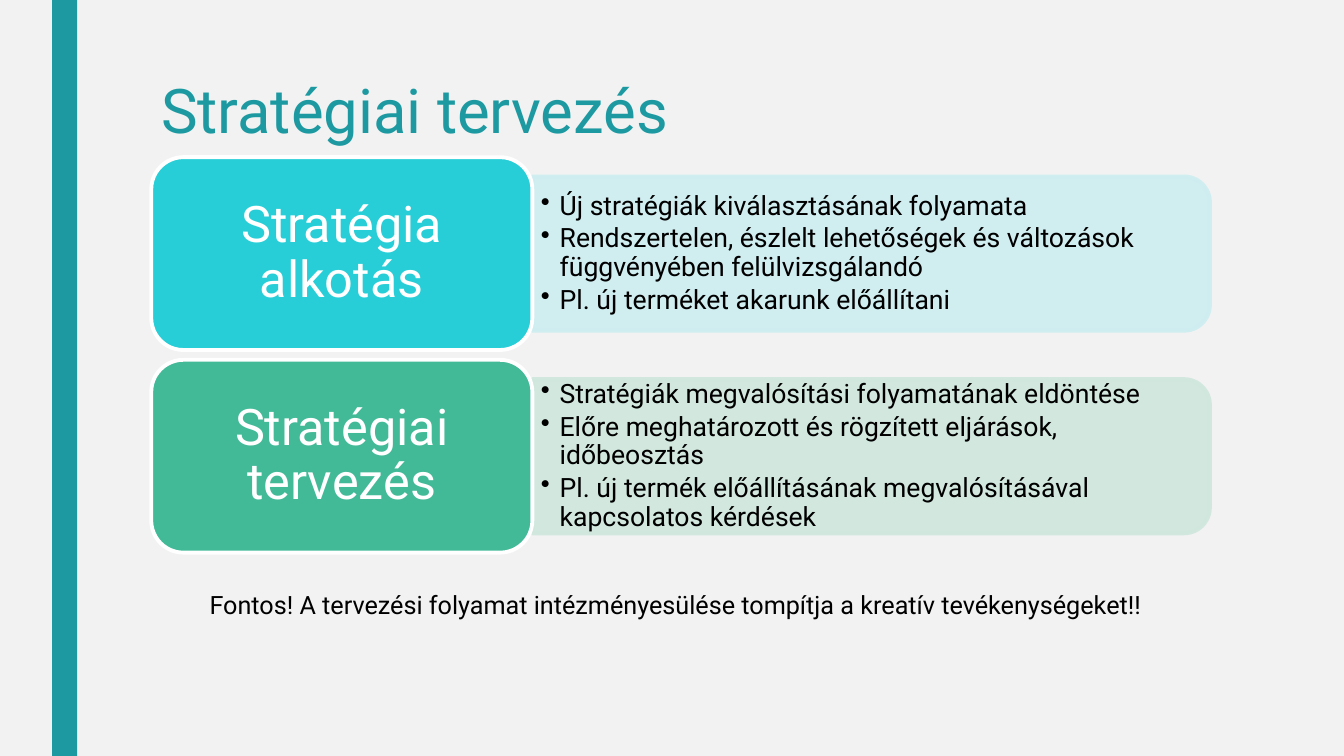
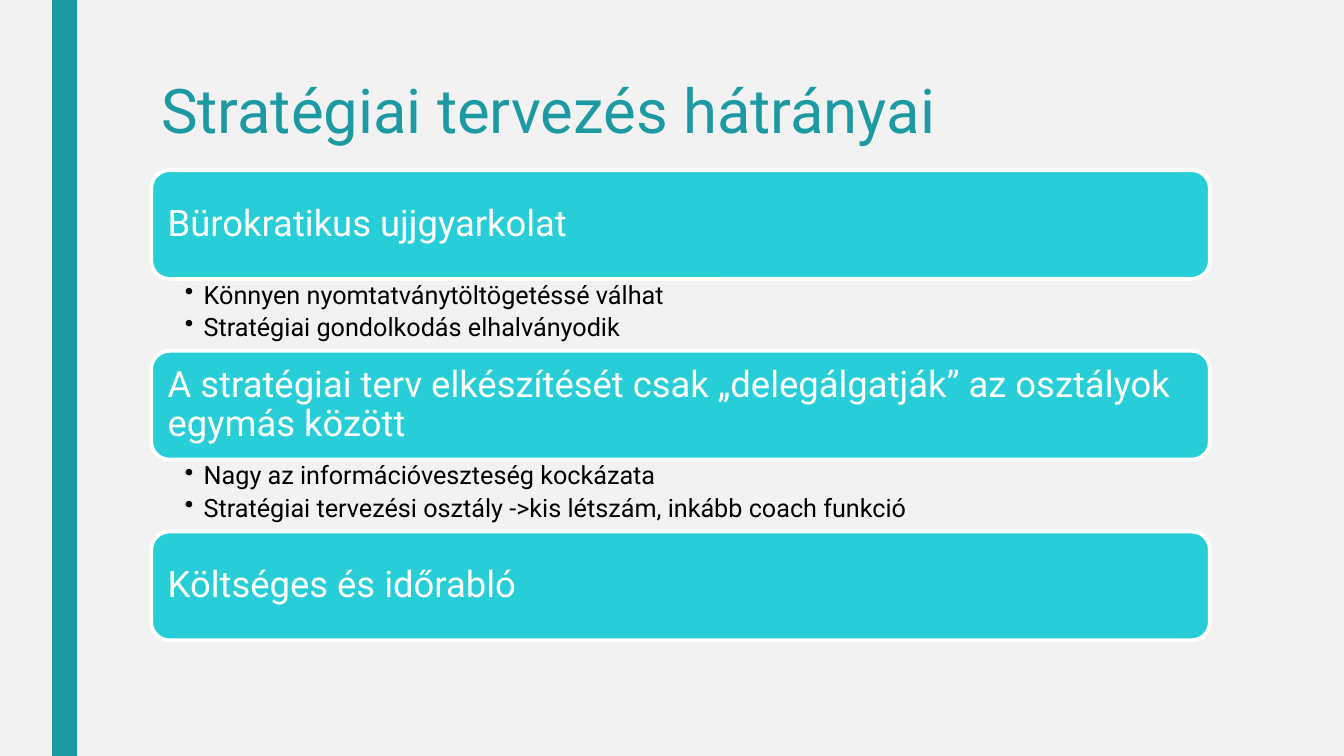
from pptx import Presentation
from pptx import util as u
from pptx.dml import color
from pptx.enum import shapes, text
from pptx.oxml import ns, xmlchemy

CELL = 0.75
LEFT, WIDE = 2, 14
TEAL, CYAN, GREEN = "1D9AA1", "27CED7", "42BA97"
WHITE, BLACK, PAPER = "FFFFFF", "000000", "F2F2F2"
FONT = "Roboto"
KIND = shapes.MSO_SHAPE
MID, TOP = text.MSO_ANCHOR.MIDDLE, text.MSO_ANCHOR.TOP
CENTER, START = text.PP_ALIGN.CENTER, text.PP_ALIGN.LEFT


def grid(*cells):
    return [u.Inches(n * CELL) for n in cells]


def paint(part, tone):
    part.solid()
    part.fore_color.rgb = color.RGBColor.from_string(tone)


def child(node, tag, **attrs):
    item = xmlchemy.OxmlElement(tag)
    for key, val in attrs.items():
        item.set(key, val)
    node.append(item)


def write(shape, lines, size, tone, pads, anchor=MID, align=START,
          lead=0.9, after=0, dots=False):
    frame = shape.text_frame
    frame.word_wrap = True
    frame.vertical_anchor = anchor
    (frame.margin_left, frame.margin_top,
     frame.margin_right, frame.margin_bottom) = [u.Pt(n) for n in pads]
    for i, line in enumerate(lines):
        para = frame.add_paragraph() if i else frame.paragraphs[0]
        para.alignment = align
        para.line_spacing = lead
        para.space_after = u.Pt(size * after)
        if dots:
            props = para._p.get_or_add_pPr()
            props.set("marL", str(u.Pt(13.5)))
            props.set("indent", str(-u.Pt(13.5)))
            child(props, "a:buChar", char="•")
        run = para.add_run()
        run.text = line
        run.font.name = FONT
        run.font.size = u.Pt(size)
        run.font.color.rgb = color.RGBColor.from_string(tone)


def block(slide, kind, place, tone, edge=None):
    shape = slide.shapes.add_shape(kind, *grid(*place))
    shape.shadow.inherit = False
    paint(shape.fill, tone)
    if edge:
        paint(shape.line.fill, edge)
        shape.line.width = u.Pt(2.75)
    else:
        shape.line.fill.background()
    return shape


def label(slide, place, lines, size, tone, pads, **style):
    box = slide.shapes.add_textbox(*grid(*place))
    write(box, lines, size, tone, pads, **style)


def panel(slide, x, mid, wide, high, tone):
    place = (x + (wide - high) / 2, mid - wide / 2, high, wide)
    shape = block(slide, KIND.ROUND_2_SAME_RECTANGLE, place, tone, tone)
    shape.rotation = 90
    for node in shape._element.spPr.iter(ns.qn("a:srgbClr")):
        child(node, "a:alpha", val="90000")


def card(slide, row, name, tone, pale, points):
    high, side = 2.55, WIDE * 0.36
    mid, x = row + high / 2, LEFT + side
    panel(slide, x, mid, WIDE - side, high * 0.8, pale)
    label(slide, (x, mid - 0.92, 8.87, 1.84), points, 19, BLACK,
          (6, 3, 6, 3), after=0.15, dots=True)
    shape = block(slide, KIND.ROUNDED_RECTANGLE, (LEFT, row, side, high),
                  tone, WHITE)
    write(shape, [name], 36, WHITE, (11, 5, 11, 5), align=CENTER, after=0.35)


def bar(slide, row, name, points):
    high = 1.44
    shape = block(slide, KIND.ROUNDED_RECTANGLE, (LEFT, row, WIDE, high),
                  CYAN, WHITE)
    write(shape, [name], 26, WHITE, (8, 8, 8, 8), after=0.35)
    if points:
        label(slide, (LEFT, row + high + 0.01, WIDE, 0.95), points, 18, BLACK,
              (24, 2, 10, 2), anchor=TOP, after=0.2, dots=True)


def page(deck, name):
    slide = deck.slides.add_slide(deck.slide_layouts[6])
    block(slide, KIND.RECTANGLE, (0.69, 0, 0.33, 10), TEAL)
    label(slide, (LEFT, 1, WIDE, 2.16), [name], 44, TEAL,
          (7.2, 3.6, 7.2, 3.6), anchor=TOP, lead=0.89)
    return slide


def main():
    deck = Presentation()
    deck.slide_width, deck.slide_height = u.Inches(13.33), u.Inches(7.5)
    paint(deck.slide_master.background.fill, PAPER)

    slide = page(deck, "Stratégiai tervezés")
    cards = [
        ("Stratégia alkotás", CYAN, "CDEDF0", [
            "Új stratégiák kiválasztásának folyamata",
            "Rendszertelen, észlelt lehetőségek és változások "
            "függvényében felülvizsgálandó",
            "Pl. új terméket akarunk előállítani"]),
        ("Stratégiai tervezés", GREEN, "CFE7DD", [
            "Stratégiák megvalósítási folyamatának eldöntése",
            "Előre meghatározott és rögzített eljárások, időbeosztás",
            "Pl. új termék előállításának megvalósításával "
            "kapcsolatos kérdések"]),
    ]
    for i, item in enumerate(cards):
        card(slide, 2.08 + i * 2.68, *item)
    label(slide, (2.64, 7.73, 13.6, 0.53),
          ["Fontos! A tervezési folyamat intézményesülése tompítja "
           "a kreatív tevékenységeket!!"],
          18, BLACK, (7.2, 3.6, 7.2, 3.6), anchor=TOP, lead=1)

    slide = page(deck, "Stratégiai tervezés hátrányai")
    bars = [
        ("Bürokratikus ujjgyarkolat", [
            "Könnyen nyomtatványtöltögetéssé válhat",
            "Stratégiai gondolkodás elhalványodik"]),
        ("A stratégiai terv elkészítését csak „delegálgatják” "
         "az osztályok egymás között", [
             "Nagy az információveszteség kockázata",
             "Stratégiai tervezési osztály ->kis létszám, "
             "inkább coach funkció"]),
        ("Költséges és időrabló", []),
    ]
    for i, item in enumerate(bars):
        bar(slide, 2.25 + i * 2.39, *item)

    deck.save("out.pptx")


if __name__ == "__main__":
    main()
